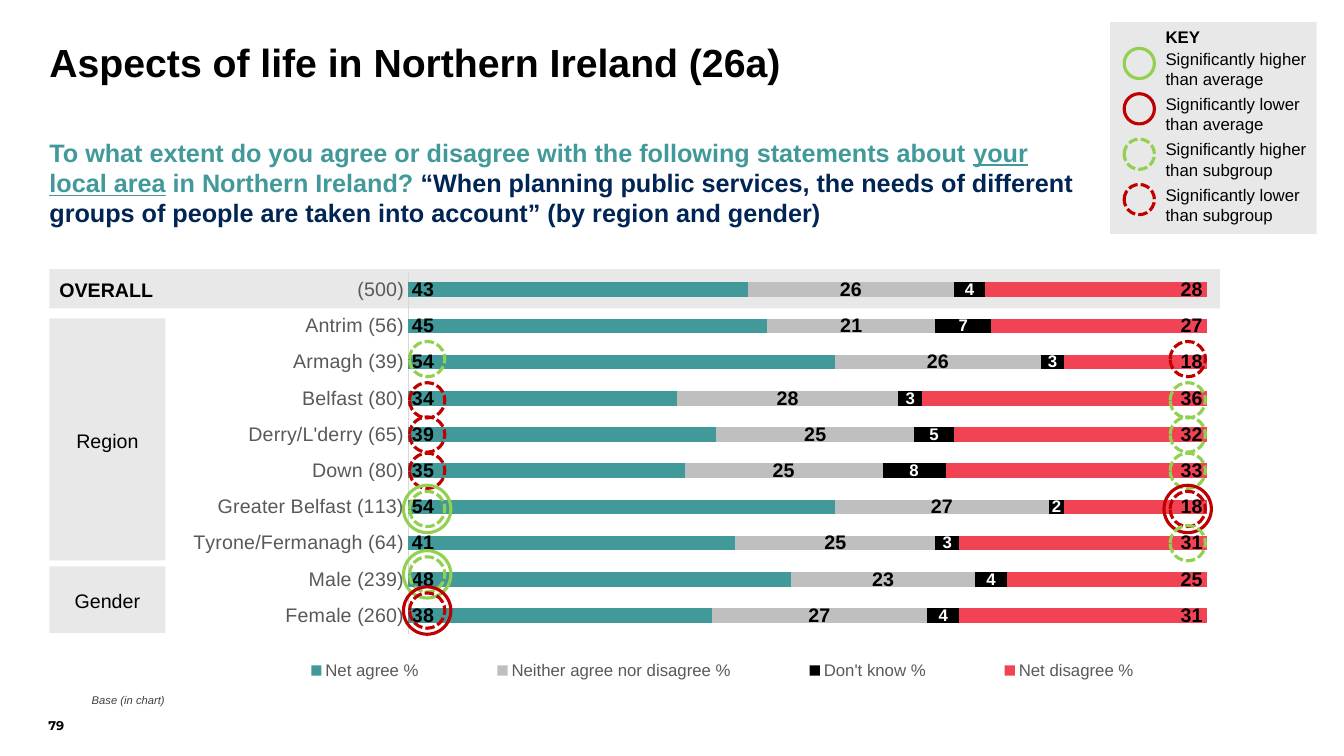
from collections import namedtuple
from dataclasses import dataclass

from lxml import etree
from pptx import Presentation
from pptx.chart.data import CategoryChartData
from pptx.dml.color import RGBColor
from pptx.enum.chart import XL_CHART_TYPE, XL_LABEL_POSITION, XL_LEGEND_POSITION, XL_TICK_MARK
from pptx.enum.dml import MSO_LINE
from pptx.enum.shapes import MSO_SHAPE
from pptx.enum.text import MSO_ANCHOR, PP_ALIGN
from pptx.oxml.ns import qn
from pptx.util import Inches, Pt

RECTANGLE, ELLIPSE = MSO_SHAPE.RECTANGLE, MSO_SHAPE.OVAL
TOP, MIDDLE, BOTTOM = MSO_ANCHOR.TOP, MSO_ANCHOR.MIDDLE, MSO_ANCHOR.BOTTOM
LEFT, CENTER = PP_ALIGN.LEFT, PP_ALIGN.CENTER
INSIDE_BASE, INSIDE_END = XL_LABEL_POSITION.INSIDE_BASE, XL_LABEL_POSITION.INSIDE_END
DASHED = MSO_LINE.SQUARE_DOT

# The slide is a grid of square cells, ten to the inch; every Box is in cells.
COLUMNS, ROWS = 133.3, 75
Box = namedtuple("Box", "x y w h")


@dataclass(frozen=True)
class Theme:
    font: str = "Arial"
    number_font: str = "Montserrat"
    black: str = "000000"
    white: str = "FFFFFF"
    panel: str = "E8E8E8"
    teal: str = "419999"
    navy: str = "002554"
    neutral: str = "BFBFBF"
    red: str = "F14354"
    axis_text: str = "595959"
    axis_line: str = "D9D9D9"
    note: str = "404040"
    higher: str = "92D050"
    lower: str = "C00000"
    title_size: float = 28
    question_size: float = 18
    label_size: float = 14
    key_size: float = 12
    number_size: float = 9
    note_size: float = 8
    ring_width: float = 2.25


THEME = Theme()

Mark = namedtuple("Mark", "meaning color dash diameter")
HIGHER = Mark("Significantly higher than average", THEME.higher, None, 4.7)
LOWER = Mark("Significantly lower than average", THEME.lower, None, 4.7)
HIGHER_SUB = Mark("Significantly higher than subgroup", THEME.higher, DASHED, 3.5)
LOWER_SUB = Mark("Significantly lower than subgroup", THEME.lower, DASHED, 3.5)

# nudge moves a row's rings up or down from the middle of its bar
Row = namedtuple("Row", "label values agree_marks disagree_marks nudge",
                 defaults=((), (), 0))
SURVEY = [
    Row("(500)", (43, 26, 4, 28)),
    Row("Antrim (56)", (45, 21, 7, 27)),
    Row("Armagh (39)", (54, 26, 3, 18), [HIGHER_SUB], [LOWER_SUB], -0.3),
    Row("Belfast (80)", (34, 28, 3, 36), [LOWER_SUB], [HIGHER_SUB], 0.2),
    Row("Derry/L'derry (65)", (39, 25, 5, 32), [LOWER_SUB], [HIGHER_SUB]),
    Row("Down (80)", (35, 25, 8, 33), [LOWER_SUB], [HIGHER_SUB]),
    Row("Greater Belfast (113)", (54, 27, 2, 18),
        [HIGHER_SUB, HIGHER], [LOWER, LOWER_SUB], 0.2),
    Row("Tyrone/Fermanagh (64)", (41, 25, 3, 31), (), [HIGHER_SUB]),
    Row("Male (239)", (48, 23, 4, 25), [HIGHER_SUB, HIGHER], (), -0.5),
    Row("Female (260)", (38, 27, 4, 31), [LOWER, LOWER_SUB], (), -0.5),
]

Answer = namedtuple("Answer", "name color label_color label_size label_position")
ANSWERS = [
    Answer("Net agree %", THEME.teal, THEME.black, THEME.label_size, INSIDE_BASE),
    Answer("Neither agree nor disagree %", THEME.neutral, THEME.black, THEME.label_size, None),
    Answer("Don't know %", THEME.black, THEME.white, THEME.key_size, None),
    Answer("Net disagree %", THEME.red, THEME.black, THEME.label_size, INSIDE_END),
]

# Shares of the chart's own frame
PLOT_SHARE = Box(0.233, 0.04, 0.767, 0.826)
LEGEND_SHARE = Box(0.07, 0.91, 0.93, 0.08)


def emu(box):
    return [Inches(cells / 10) for cells in box]


def style_font(font, size, color, bold=False, name=THEME.font):
    font.name, font.size, font.bold = name, Pt(size), bold
    font.color.rgb = RGBColor.from_string(color)


def fill(target, color):
    target.fill.solid()
    target.fill.fore_color.rgb = RGBColor.from_string(color)


def add_text(shapes, box, text, size, color=THEME.black, bold=False, anchor=TOP,
             spacing=1.0, name=THEME.font, wrap=True):
    frame = shapes.add_textbox(*emu(box)).text_frame
    frame.margin_left = frame.margin_top = frame.margin_right = frame.margin_bottom = 0
    frame.word_wrap, frame.vertical_anchor = wrap, anchor
    line = frame.paragraphs[0]
    line.text, line.line_spacing = text, spacing
    style_font(line.font, size, color, bold, name)
    return line


def add_panel(shapes, box, text="", align=CENTER, bold=False):
    panel = shapes.add_shape(RECTANGLE, *emu(box))
    panel.shadow.inherit = False
    fill(panel, THEME.panel)
    panel.line.fill.background()
    if text:
        panel.text_frame.vertical_anchor = MIDDLE
        line = panel.text_frame.paragraphs[0]
        line.text, line.alignment, line.line_spacing = text, align, 1.1
        style_font(line.font, THEME.label_size, THEME.black, bold)


def add_ring(shapes, center_x, center_y, mark, diameter):
    radius = diameter / 2
    ring = shapes.add_shape(
        ELLIPSE, *emu((center_x - radius, center_y - radius, diameter, diameter)))
    ring.shadow.inherit = False
    ring.fill.background()
    ring.line.color.rgb = RGBColor.from_string(mark.color)
    ring.line.width = Pt(THEME.ring_width)
    if mark.dash:
        ring.line.dash_style = mark.dash


def add_heading(shapes, box):
    """Title over the survey question."""
    add_text(shapes, box._replace(h=8.5), "Aspects of life in Northern Ireland (26a)",
             THEME.title_size, bold=True, spacing=0.9)
    question = add_text(shapes, Box(box.x, box.y + 9.3, box.w, box.h - 9.3), "",
                        THEME.question_size, THEME.teal, bold=True)
    for text, underlined, color in (
            ("To what extent do you agree or disagree with the following statements about ",
             False, THEME.teal),
            ("your local area", True, THEME.teal),
            (" in Northern Ireland? ", False, THEME.teal),
            ("“When planning public services, the needs of different groups of people "
             "are taken into account” (by region and gender)", False, THEME.navy)):
        run = question.add_run()
        run.text = text
        style_font(run.font, THEME.question_size, color, bold=True)
        run.font.underline = underlined


def add_key(slide, box):
    key = slide.shapes.add_group_shape().shapes
    add_panel(key, box)
    text_x = box.x + 5.5
    add_text(key, Box(text_x, box.y + 0.3, 4.5, 2), "KEY", THEME.key_size,
             bold=True, spacing=1.1)
    for index, mark in enumerate((HIGHER, LOWER, HIGHER_SUB, LOWER_SUB)):
        top = box.y + 2.6 + 4.5 * index
        add_ring(key, box.x + 2.9, top + 1.5, mark, 3)
        add_text(key, Box(text_x, top, 14.1, 4), mark.meaning, THEME.key_size)


def set_layout(part, share, inner=False):
    """Place a plot area or legend at a share of the chart frame."""
    for old in part.findall(qn("c:layout")):
        part.remove(old)
    layout = etree.Element(qn("c:layout"))
    manual = etree.SubElement(layout, qn("c:manualLayout"))
    settings = [("layoutTarget", "inner")] if inner else []
    settings += [("xMode", "edge"), ("yMode", "edge")] + list(share._asdict().items())
    for tag, value in settings:
        etree.SubElement(manual, qn("c:" + tag)).set("val", str(value))
    part.insert(0 if inner else 1, layout)


def add_answers_chart(shapes, box):
    data = CategoryChartData(number_format="0")
    bottom_up = SURVEY[::-1]
    data.categories = [row.label for row in bottom_up]
    for answer, values in zip(ANSWERS, zip(*(row.values for row in bottom_up))):
        data.add_series(answer.name, values)
    chart = shapes.add_chart(XL_CHART_TYPE.BAR_STACKED_100, *emu(box), data).chart
    style_font(chart.font, 10, THEME.black)
    chart.has_title = False

    axis = chart.category_axis
    axis.major_tick_mark = axis.minor_tick_mark = XL_TICK_MARK.NONE
    style_font(axis.tick_labels.font, THEME.label_size, THEME.axis_text)
    axis.format.line.color.rgb = RGBColor.from_string(THEME.axis_line)
    axis.format.line.width = Pt(0.75)
    chart.value_axis.has_major_gridlines = False
    chart.value_axis.visible = False

    plot = chart.plots[0]
    plot.gap_width, plot.overlap, plot.vary_by_categories = 150, 100, False
    for series, answer in zip(plot.series, ANSWERS):
        fill(series.format, answer.color)
        labels = series.data_labels
        labels.show_value = True
        labels.number_format, labels.number_format_is_linked = "0", False
        style_font(labels.font, answer.label_size, answer.label_color, bold=True)
        if answer.label_position is not None:
            labels.position = answer.label_position

    chart.has_legend = True
    chart.legend.position = XL_LEGEND_POSITION.BOTTOM
    chart.legend.include_in_layout = False
    style_font(chart.legend.font, THEME.key_size, THEME.axis_text)
    plot_area = chart.element.find(".//" + qn("c:plotArea"))
    set_layout(plot_area, PLOT_SHARE, inner=True)
    set_layout(chart.element.find(".//" + qn("c:legend")), LEGEND_SHARE)


def add_significance_rings(shapes, box):
    plot_x, plot_y = box.x + PLOT_SHARE.x * box.w, box.y + PLOT_SHARE.y * box.h
    pitch = PLOT_SHARE.h * box.h / len(SURVEY)
    for index, row in enumerate(SURVEY):
        center_y = plot_y + pitch * (index + 0.5) + row.nudge
        for center_x, marks in ((plot_x + 1.9, row.agree_marks),
                                (box.x + box.w - 1.9, row.disagree_marks)):
            for mark in marks:
                add_ring(shapes, center_x, center_y, mark, mark.diameter)


def add_results(shapes, box):
    """Row panels, stacked bars and the rings around notable values."""
    add_panel(shapes, Box(box.x, box.y, box.w, 3.9), "OVERALL", LEFT, bold=True)
    add_panel(shapes, Box(box.x, box.y + 4.9, 11.5, 24), "Region")
    add_panel(shapes, Box(box.x, box.y + 29.5, 11.5, 6.6), "Gender")
    chart_box = Box(box.x + 11.5, box.y - 1.5, 103.3, box.h + 1.5)
    add_answers_chart(shapes, chart_box)
    add_significance_rings(shapes, chart_box)


def add_footer(shapes, box):
    note = add_text(shapes, Box(box.x + 4.3, box.y, box.w - 4.3, 1.4), "Base (in chart)",
                    THEME.note_size, THEME.note, anchor=BOTTOM, spacing=1.1)
    note.font.italic = True
    add_text(shapes, box._replace(w=3.3), "79", THEME.number_size, bold=True,
             anchor=BOTTOM, name=THEME.number_font, wrap=False)


def main():
    deck = Presentation()
    deck.slide_width, deck.slide_height = emu((COLUMNS, ROWS))
    slide = deck.slides.add_slide(deck.slide_layouts[6])
    add_heading(slide.shapes, Box(4.9, 4.3, 102.2, 18.4))
    add_key(slide, Box(110.1, 2.2, 20.5, 21))
    add_results(slide.shapes, Box(4.9, 26.7, 116.1, 42))
    add_footer(slide.shapes, Box(4.8, 68.7, 127.6, 4))
    deck.save("out.pptx")


if __name__ == "__main__":
    main()
